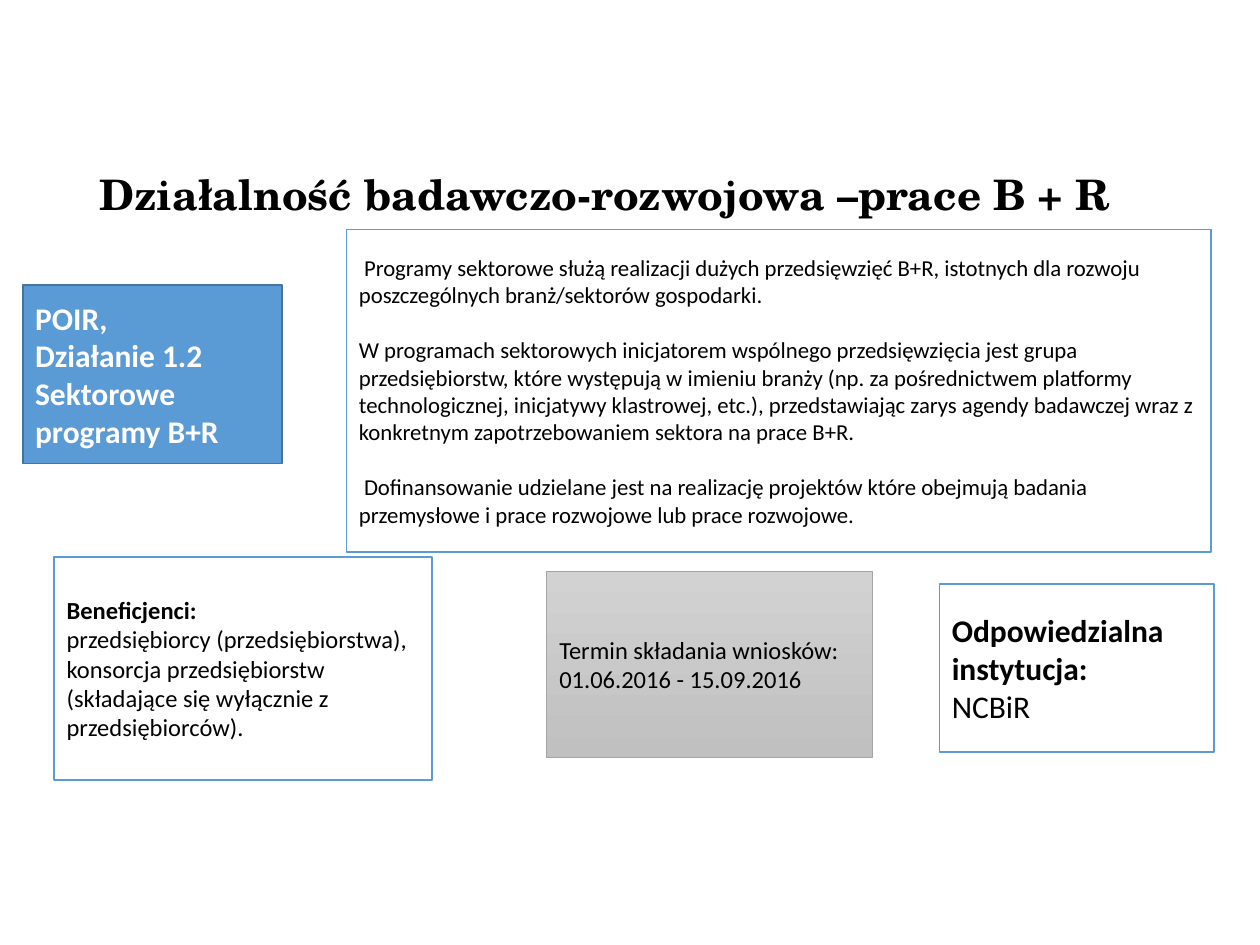
from dataclasses import dataclass

from pptx import Presentation
from pptx.dml.color import RGBColor
from pptx.enum.shapes import MSO_SHAPE
from pptx.enum.text import MSO_ANCHOR, PP_ALIGN
from pptx.util import Pt

RECTANGLE = MSO_SHAPE.RECTANGLE
MIDDLE = MSO_ANCHOR.MIDDLE
LEFT = PP_ALIGN.LEFT

BLACK = RGBColor(0x00, 0x00, 0x00)
WHITE = RGBColor(0xFF, 0xFF, 0xFF)
BLUE = RGBColor(0x5B, 0x9B, 0xD5)
DARK_BLUE = RGBColor(0x43, 0x73, 0x9E)
GREY = RGBColor(0xA5, 0xA5, 0xA5)
GREY_TOP = RGBColor(0xD2, 0xD2, 0xD2)
GREY_BOTTOM = RGBColor(0xC0, 0xC0, 0xC0)

BODY_FONT = "Calibri"
TITLE_FONT = "TeX Gyre Schola"


@dataclass
class Box:
    left: float
    top: float
    width: float
    height: float
    size: float
    paragraphs: tuple[str, ...]
    bold_count: int = 0  # how many leading paragraphs are bold
    gap: float = 0  # space between paragraphs
    fills: tuple[RGBColor, ...] = (WHITE,)  # two colours make a gradient
    line: RGBColor = BLUE
    line_width: float = 1
    text_color: RGBColor = BLACK


PROGRAMME = Box(
    13, 162.7, 148.3, 102.2, 18,
    ("POIR,", "Działanie 1.2", "Sektorowe programy B+R"),
    bold_count=3, fills=(BLUE,), line=DARK_BLUE, text_color=WHITE,
)
DESCRIPTION = Box(
    198, 131.2, 494, 184.3, 13,
    (
        " Programy sektorowe służą realizacji dużych przedsięwzięć B+R, "
        "istotnych dla rozwoju poszczególnych branż/sektorów gospodarki.",
        "W programach sektorowych inicjatorem wspólnego przedsięwzięcia jest "
        "grupa przedsiębiorstw, które występują w imieniu branży (np. za "
        "pośrednictwem platformy technologicznej, inicjatywy klastrowej, "
        "etc.), przedstawiając zarys agendy badawczej wraz z konkretnym "
        "zapotrzebowaniem sektora na prace B+R.",
        " Dofinansowanie udzielane jest na realizację projektów które "
        "obejmują badania przemysłowe i prace rozwojowe lub prace rozwojowe.",
    ),
    gap=15.8,
)
BENEFICIARIES = Box(
    31, 318.2, 216, 127.4, 14,
    (
        "Beneficjenci:",
        "przedsiębiorcy (przedsiębiorstwa),",
        "konsorcja przedsiębiorstw (składające się wyłącznie z przedsiębiorców).",
    ),
    bold_count=1,
)
INSTITUTION = Box(
    536.8, 333.8, 157, 95.8, 18,
    ("Odpowiedzialna instytucja:", "NCBiR"),
    bold_count=1,
)
DEADLINE = Box(
    312.5, 326.5, 185.8, 106.4, 14,
    ("Termin składania wniosków:", "01.06.2016 - 15.09.2016"),
    fills=(GREY_TOP, GREY_BOTTOM), line=GREY, line_width=0.5,
)


def set_font(font, name: str, size: float, color: RGBColor, bold: bool) -> None:
    font.name = name
    font.size = Pt(size)
    font.color.rgb = color
    font.bold = bold


def add_title(slide, text: str) -> None:
    title = slide.shapes.add_textbox(Pt(49.7), Pt(75.6), Pt(620.6), Pt(73.4))
    frame = title.text_frame
    frame.word_wrap = True
    frame.vertical_anchor = MIDDLE
    frame.text = text
    heading = frame.paragraphs[0]
    heading.line_spacing = 0.9
    set_font(heading.runs[0].font, TITLE_FONT, 24, BLACK, True)


def add_box(slide, box: Box) -> None:
    panel = slide.shapes.add_shape(
        RECTANGLE, Pt(box.left), Pt(box.top), Pt(box.width), Pt(box.height)
    )
    panel.shadow.inherit = False
    panel.line.color.rgb = box.line
    panel.line.width = Pt(box.line_width)
    if len(box.fills) == 1:
        panel.fill.solid()
        panel.fill.fore_color.rgb = box.fills[0]
    else:
        panel.fill.gradient()
        panel.fill.gradient_angle = 270  # top to bottom
        for stop, color in zip(panel.fill.gradient_stops, box.fills):
            stop.color.rgb = color

    frame = panel.text_frame
    frame.word_wrap = True
    frame.vertical_anchor = MIDDLE
    frame.text = "\n".join(box.paragraphs)
    for index, paragraph in enumerate(frame.paragraphs):
        paragraph.alignment = LEFT
        if index and box.gap:
            paragraph.space_before = Pt(box.gap)
        set_font(paragraph.runs[0].font, BODY_FONT, box.size,
                 box.text_color, index < box.bold_count)


def main() -> None:
    presentation = Presentation()
    presentation.slide_width = Pt(720)
    presentation.slide_height = Pt(540)
    slide = presentation.slides.add_slide(presentation.slide_layouts[6])

    add_title(slide, "Działalność badawczo-rozwojowa –prace B + R")
    for box in (PROGRAMME, DESCRIPTION, BENEFICIARIES, INSTITUTION, DEADLINE):
        add_box(slide, box)

    presentation.save("out.pptx")


if __name__ == "__main__":
    main()
